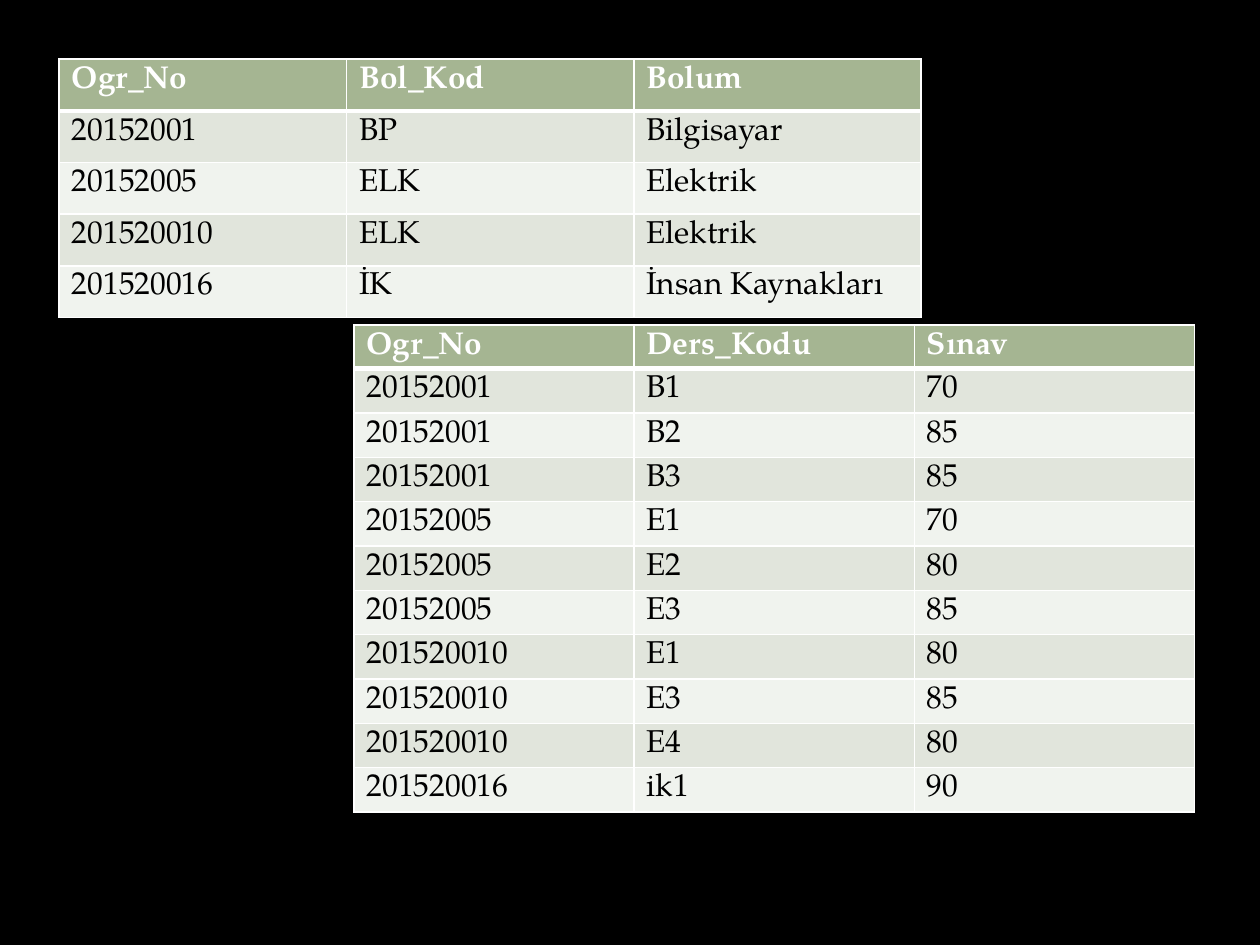
from lxml import etree
from pptx import Presentation, util as u
from pptx.dml.color import RGBColor
from pptx.oxml.ns import qn

FONT = "TeX Gyre Pagella"
WHITE, BLACK = "FFFFFF", "000000"
HEADER_FILL = "A5B592"
BAND_FILLS = ("F0F3EE", "E1E5DC")

DEPARTMENTS = [
    ("Ogr_No", "Bol_Kod", "Bolum"),
    ("20152001", "BP", "Bilgisayar"),
    ("20152005", "ELK", "Elektrik"),
    ("201520010", "ELK", "Elektrik"),
    ("201520016", "İK", "İnsan Kaynakları"),
]
EXAMS = [
    ("Ogr_No", "Ders_Kodu", "Sınav"),
    ("20152001", "B1", "70"),
    ("20152001", "B2", "85"),
    ("20152001", "B3", "85"),
    ("20152005", "E1", "70"),
    ("20152005", "E2", "80"),
    ("20152005", "E3", "85"),
    ("201520010", "E1", "80"),
    ("201520010", "E3", "85"),
    ("201520010", "E4", "80"),
    ("201520016", "ik1", "90"),
]


def set_fill(fill, color):
    fill.solid()
    fill.fore_color.rgb = RGBColor.from_string(color)


def write_text(frame, content, color=BLACK, size=18, bold=False):
    run = frame.paragraphs[0].add_run()
    run.text = content
    run.font.name = FONT
    run.font.size = u.Pt(size)
    run.font.bold = bold
    run.font.color.rgb = RGBColor.from_string(color)


def set_borders(cell, color=WHITE, **widths):
    properties = cell._tc.get_or_add_tcPr()
    for side in ("L", "R", "T", "B"):
        width = u.Pt(widths.get(side, 1))
        line = etree.SubElement(properties, qn(f"a:ln{side}"), w=str(width))
        fill = etree.SubElement(line, qn("a:solidFill"))
        etree.SubElement(fill, qn("a:srgbClr"), val=color)


def add_data_table(slide, records, left, top, width, height, row_height):
    shape = slide.shapes.add_table(len(records), len(records[0]), u.Inches(left),
                                   u.Inches(top), u.Inches(width), u.Inches(height))
    table = shape.table
    for row_index, record in enumerate(records):
        table.rows[row_index].height = u.Inches(row_height)
        header = row_index == 0
        borders = {0: {"B": 3}, 1: {"T": 3}}.get(row_index, {})
        for column_index, content in enumerate(record):
            cell = table.cell(row_index, column_index)
            set_borders(cell, **borders)
            set_fill(cell.fill, HEADER_FILL if header else BAND_FILLS[row_index % 2])
            write_text(cell.text_frame, content,
                       color=WHITE if header else BLACK, bold=header)
    shape.height = u.Inches(height)


def main():
    presentation = Presentation()
    presentation.slide_width = u.Inches(10)
    presentation.slide_height = u.Inches(7.5)
    slide = presentation.slides.add_slide(presentation.slide_layouts[6])
    set_fill(slide.background.fill, BLACK)
    add_data_table(slide, DEPARTMENTS, 0.47, 0.47, 6.84, 2.03, row_height=0.41)
    add_data_table(slide, EXAMS, 2.81, 2.58, 6.67, 4.4, row_height=0.34)
    presentation.save("out.pptx")


if __name__ == "__main__":
    main()
